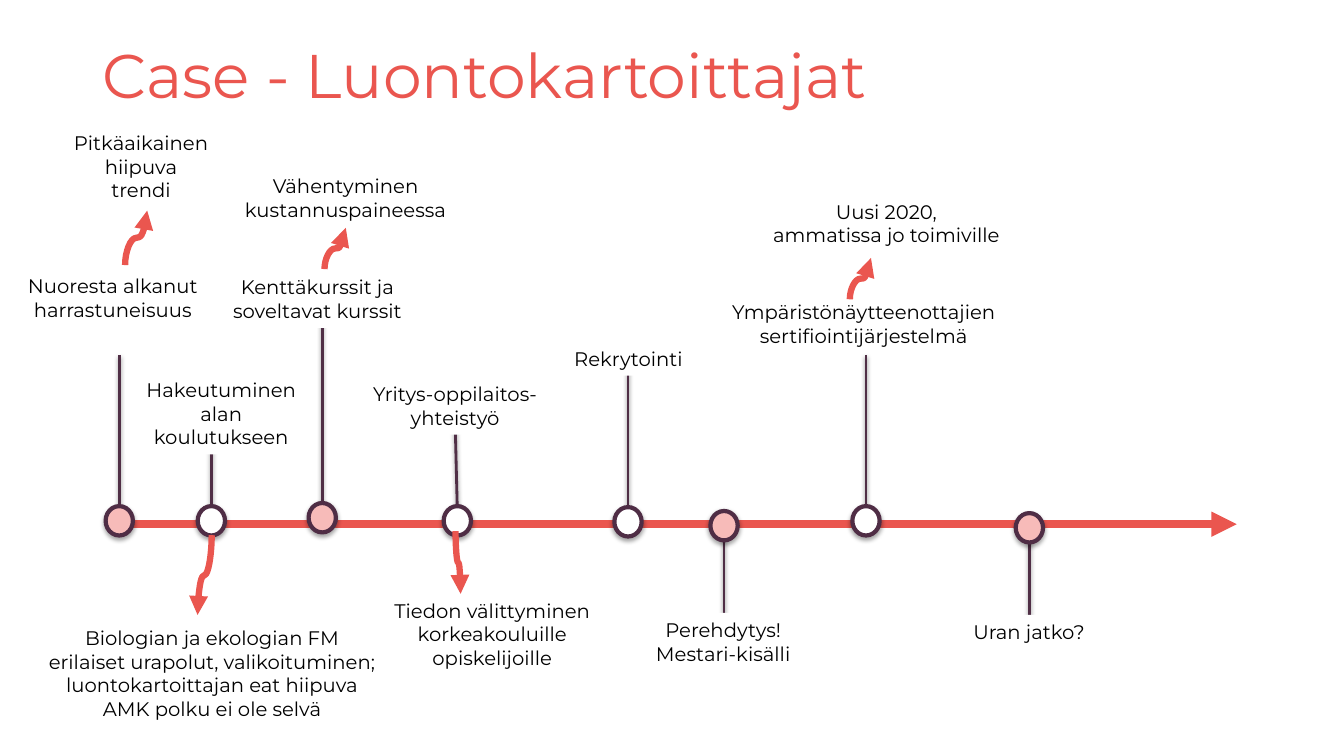
from lxml import etree
from pptx import Presentation
from pptx.dml.color import RGBColor
from pptx.enum import shapes, text
from pptx.oxml.ns import qn
from pptx.util import Pt

CORAL, PINK, PLUM, RIM, WHITE, BLACK = "EA564F", "F7BBB9", "502F46", "4F2D45", "FFFFFF", "000000"
FONT = "Montserrat"
DOT_WIDTH, DOT_HEIGHT = 19.5, 21


def paint(target, color):
    """Give a fill, or the fill of a line or font, one solid colour."""
    target.solid()
    target.fore_color.rgb = RGBColor.from_string(color)


def finish(shape, color, width, shadow_opacity=0, arrow=False):
    """Style the outline, then replace the theme shadow by a soft one or none."""
    paint(shape.line.fill, color)
    shape.line.width = Pt(width)
    properties = shape._element.spPr
    if arrow:
        etree.SubElement(properties.find(qn("a:ln")), qn("a:tailEnd"), type="triangle")
    effects = etree.SubElement(properties, qn("a:effectLst"))
    if shadow_opacity:
        shadow = etree.SubElement(effects, qn("a:outerShdw"), blurRad=str(Pt(3.1)),
                                  dist=str(Pt(1.7)), dir="5400000", rotWithShape="0")
        shade = etree.SubElement(shadow, qn("a:srgbClr"), val=BLACK)
        etree.SubElement(shade, qn("a:alpha"), val=str(shadow_opacity * 1000))


presentation = Presentation()
presentation.slide_width, presentation.slide_height = Pt(960), Pt(540)
slide = presentation.slides.add_slide(presentation.slide_layouts[5])

# Title
title = slide.shapes.title
title.left, title.top, title.width, title.height = Pt(66), Pt(29), Pt(862), Pt(104)
frame = title.text_frame
frame.word_wrap = True
frame.auto_size = text.MSO_AUTO_SIZE.NONE
frame.vertical_anchor = text.MSO_ANCHOR.TOP
paragraph = frame.paragraphs[0]
paragraph.alignment = text.PP_ALIGN.LEFT
paragraph.line_spacing = 0.9
run = paragraph.add_run()
run.text = "Case - Luontokartoittajat"
run.font.name, run.font.size = FONT, Pt(44)
paint(run.font.fill, CORAL)

# Time axis
axis = slide.shapes.add_connector(shapes.MSO_CONNECTOR.STRAIGHT, Pt(75.6), Pt(374.4), Pt(883.4), Pt(374.4))
finish(axis, CORAL, 6, arrow=True)

# Milestones: dot centre x, dot top, stem's outer x and y, dot colour
milestones = [
    (85.2, 361.5, 85.2, 253.5, PINK),
    (151, 361.5, 151, 284.5, WHITE),
    (230.2, 359.3, 230.2, 217.5, PINK),
    (326.7, 361.5, 324.7, 284.5, WHITE),
    (448.6, 362.2, 448.6, 255, WHITE),
    (517.2, 365, 517.2, 438, PINK),
    (618.6, 361.5, 618.6, 253.5, WHITE),
    (735.3, 366.5, 735.3, 439, PINK),
]
for x, top, stem_x, stem_y, color in milestones:
    inner_y = top + (4.5 if stem_y < top else DOT_HEIGHT - 4.5)
    stem = slide.shapes.add_connector(shapes.MSO_CONNECTOR.STRAIGHT, Pt(stem_x), Pt(stem_y), Pt(x), Pt(inner_y))
    finish(stem, PLUM, 2, shadow_opacity=38)
    dot = slide.shapes.add_shape(shapes.MSO_SHAPE.OVAL, Pt(x - DOT_WIDTH / 2), Pt(top),
                                 Pt(DOT_WIDTH), Pt(DOT_HEIGHT))
    paint(dot.fill, color)
    finish(dot, RIM, 3, shadow_opacity=35)

# Labels: left, top, width, lines
labels = [
    (-4.3, 192.2, 170, ["Nuoresta alkanut", "harrastuneisuus"]),
    (89.3, 266.4, 137.5, ["Hakeutuminen", "alan", "koulutukseen"]),
    (258.5, 269.3, 133.2, ["Yritys-oppilaitos-", "yhteistyö"]),
    (402.5, 244.1, 92.9, ["Rekrytointi"]),
    (508.3, 211, 217.4, ["Ympäristönäytteenottajien", "sertifiointijärjestelmä"]),
    (460.8, 437.8, 111.6, ["Perehdytys!", "Mestari-kisälli"]),
    (158.4, 193, 136.8, ["Kenttäkurssit ja", "soveltavat kurssit"]),
    (24.5, 443.5, 254.2, ["Biologian ja ekologian FM", "erilaiset urapolut, valikoituminen;",
                           "luontokartoittajan eat hiipuva", "AMK polku ei ole selvä"]),
    (43.2, 90, 115.2, ["Pitkäaikainen", "hiipuva", "trendi"]),
    (167, 121, 159.8, ["Vähentyminen", "kustannuspaineessa"]),
    (544.3, 139, 177.8, ["Uusi 2020,", "ammatissa jo toimiville"]),
    (273.6, 424.1, 156.2, ["Tiedon välittyminen", "korkeakouluille", "opiskelijoille"]),
    (686.9, 439.2, 96.5, ["Uran jatko?"]),
]
for left, top, width, lines in labels:
    label = slide.shapes.add_textbox(Pt(left), Pt(top), Pt(width), Pt(7.2 + 17 * len(lines)))
    paint(label.fill, WHITE)
    label.text_frame.word_wrap = False
    paragraph = label.text_frame.paragraphs[0]
    paragraph.alignment = text.PP_ALIGN.CENTER
    for index, line in enumerate(lines):
        if index:
            paragraph.add_line_break()
        run = paragraph.add_run()
        run.text = line
        run.font.name, run.font.size = FONT, Pt(14)
        paint(run.font.fill, BLACK)

# Curved arrows leave vertically: each is laid out on its side, then turned 90 degrees
curves = [
    (151.2, 382.3, 141.1, 439.2),
    (89.3, 189.4, 105.1, 150.5),
    (231.8, 192.2, 247, 162.7),
    (607, 213.8, 622.1, 184.3),
    (325.4, 379.4, 329, 424.1),
]
for x1, y1, x2, y2 in curves:
    middle_x, middle_y = (x1 + x2) / 2, (y1 + y2) / 2
    half_x, half_y = (x2 - x1) / 2, (y2 - y1) / 2
    curve = slide.shapes.add_connector(shapes.MSO_CONNECTOR.CURVE,
                                       Pt(middle_x - half_y), Pt(middle_y + half_x),
                                       Pt(middle_x + half_y), Pt(middle_y - half_x))
    curve._element.spPr.find(qn("a:xfrm")).set("rot", "5400000")
    finish(curve, CORAL, 4.5, arrow=True)

presentation.save("out.pptx")
